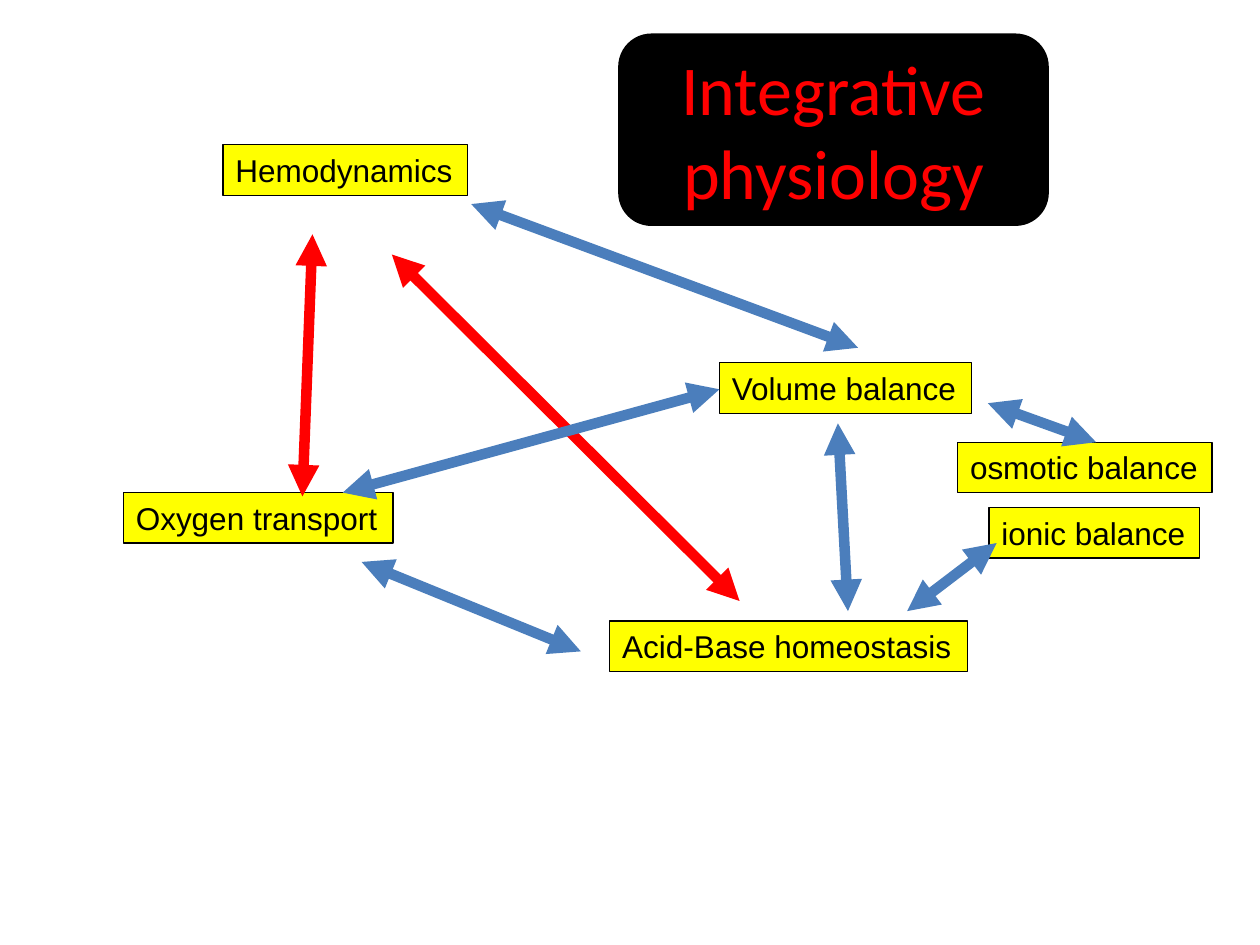
from lxml.etree import SubElement
from pptx import Presentation
from pptx.dml.color import RGBColor
from pptx.enum.shapes import MSO_CONNECTOR, MSO_SHAPE
from pptx.enum.text import MSO_ANCHOR, MSO_AUTO_SIZE, PP_ALIGN
from pptx.oxml.ns import qn
from pptx.util import Inches, Pt

BLACK, RED, YELLOW, BLUE = "000000", "FF0000", "FFFF00", "4B7EBC"


def paint(color_format, hex_color):
    color_format.rgb = RGBColor.from_string(hex_color)


class Diagram:
    """Draws the labelled parts of a relationship diagram on one slide."""

    def __init__(self, slide):
        self.slide = slide

    def block(self, preset, text, bounds, fill, line_width, font, size, color):
        block = self.slide.shapes.add_shape(preset, *map(Inches, bounds))
        block.shadow.inherit = False
        block.fill.solid()
        paint(block.fill.fore_color, fill)
        paint(block.line.color, BLACK)
        block.line.width = Pt(line_width)
        block.text_frame.text = text
        paragraph = block.text_frame.paragraphs[0]
        run_font = paragraph.runs[0].font
        run_font.name, run_font.size = font, Pt(size)
        paint(run_font.color, color)
        return block.text_frame, paragraph

    def label(self, text, left, top, width):
        frame, paragraph = self.block(
            MSO_SHAPE.RECTANGLE, text, (left, top, width, 0.4),
            YELLOW, 0.75, "Arial", 18, BLACK)
        frame.word_wrap = False
        frame.auto_size = MSO_AUTO_SIZE.SHAPE_TO_FIT_TEXT
        frame.vertical_anchor = MSO_ANCHOR.TOP
        paragraph.alignment = PP_ALIGN.LEFT

    def title(self, text, *bounds):
        frame, paragraph = self.block(
            MSO_SHAPE.ROUNDED_RECTANGLE, text, bounds,
            BLACK, 2, "Calibri", 40, RED)
        frame.word_wrap = True
        frame.vertical_anchor = MSO_ANCHOR.MIDDLE
        paragraph.alignment = PP_ALIGN.CENTER

    def link(self, color, *ends):
        link = self.slide.shapes.add_connector(
            MSO_CONNECTOR.STRAIGHT, *map(Inches, ends))
        paint(link.line.color, color)
        link.line.width = Pt(6)
        line = link.line._get_or_add_ln()
        for end in ("a:headEnd", "a:tailEnd"):
            SubElement(line, qn(end), type="triangle")
        SubElement(link._element.spPr, qn("a:effectLst"))


def main():
    presentation = Presentation()
    presentation.slide_width = Inches(10)
    presentation.slide_height = Inches(7.5)
    diagram = Diagram(presentation.slides.add_slide(presentation.slide_layouts[6]))

    main_systems = [
        ("Hemodynamics", 1.77, 1.15, 1.94),
        ("Volume balance", 5.71, 2.88, 2),
        ("Oxygen transport", 0.98, 3.91, 2.14),
        ("Acid-Base homeostasis", 4.84, 4.93, 2.84),
    ]
    main_links = [
        (RED, 3.11, 2.02, 5.87, 4.77),
        (BLUE, 5.71, 3.09, 2.72, 3.91),
        (BLUE, 3.74, 1.62, 6.81, 2.76),
        (RED, 2.48, 1.86, 2.4, 3.94),
        (BLUE, 4.61, 5.17, 2.87, 4.46),
        (BLUE, 6.73, 4.85, 6.65, 3.36),
    ]
    for system in main_systems:
        diagram.label(*system)
    for ends in main_links:
        diagram.link(*ends)

    diagram.title("Integrative physiology", 4.92, 0.28, 3.39, 1.5)

    diagram.label("osmotic balance", 7.6, 3.51, 2.02)
    diagram.link(BLUE, 8.7, 3.51, 7.84, 3.2)
    diagram.label("ionic balance", 7.85, 4.03, 1.67)
    diagram.link(BLUE, 7.91, 4.31, 7.2, 4.85)

    presentation.save("out.pptx")


if __name__ == "__main__":
    main()
